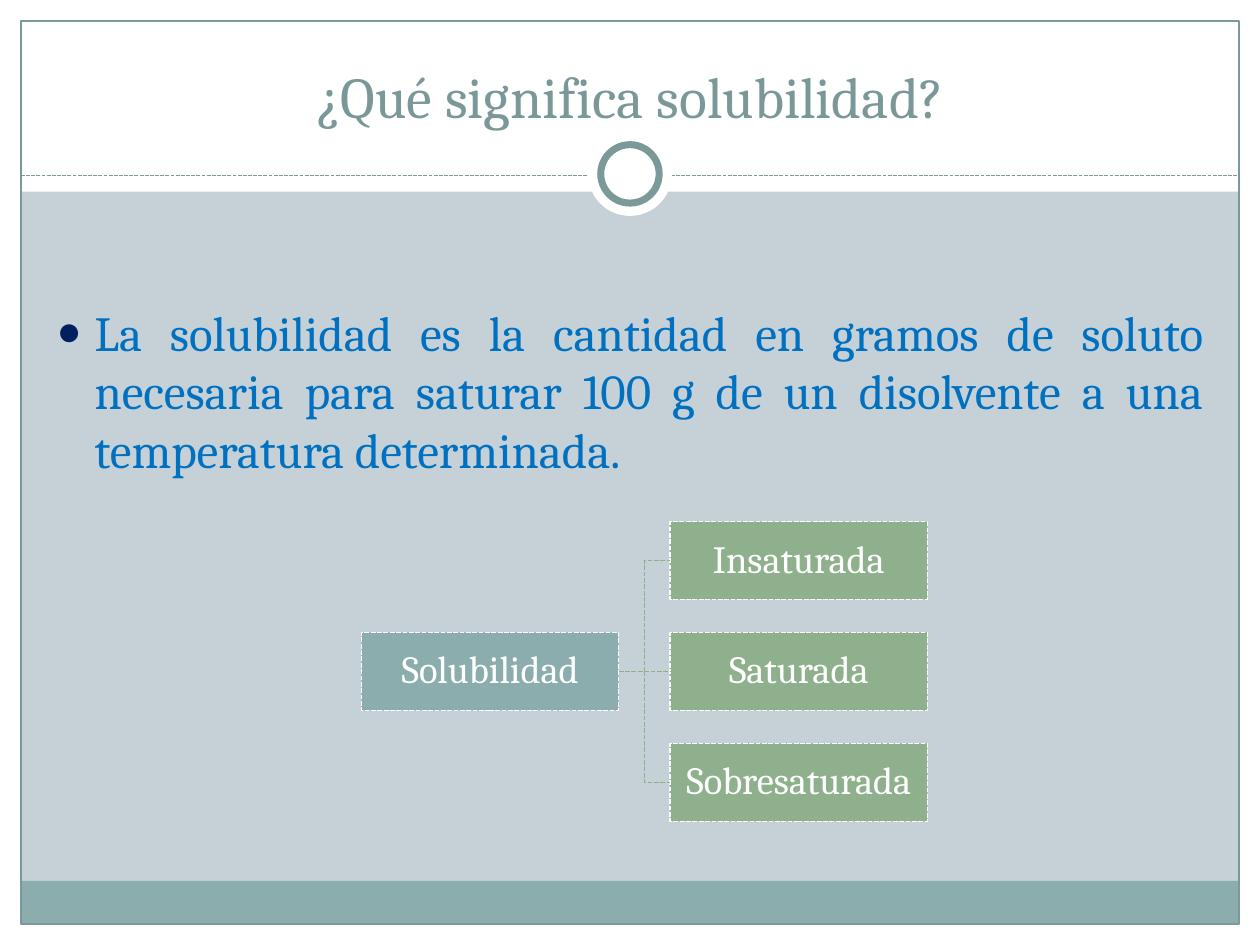
from lxml import etree
from pptx import Presentation
from pptx.dml.color import RGBColor
from pptx.enum.dml import MSO_LINE
from pptx.enum.shapes import MSO_CONNECTOR, MSO_SHAPE
from pptx.enum.text import MSO_ANCHOR, PP_ALIGN
from pptx.oxml.ns import qn
from pptx.util import Pt

RECT, OVAL = MSO_SHAPE.RECTANGLE, MSO_SHAPE.OVAL
STRAIGHT, ELBOW = MSO_CONNECTOR.STRAIGHT, MSO_CONNECTOR.ELBOW
DASH = MSO_LINE.SQUARE_DOT
CENTER, JUSTIFY = PP_ALIGN.CENTER, PP_ALIGN.JUSTIFY
TOP, MIDDLE, BOTTOM = MSO_ANCHOR.TOP, MSO_ANCHOR.MIDDLE, MSO_ANCHOR.BOTTOM
RIGHT, LEFT = 3, 1

WHITE, TEAL, SLATE, GREEN = "FFFFFF", "8CADAE", "7C999A", "8FB08C"
WIDE, HIGH, EDGE = 720, 540, 12


def color(code):
    return RGBColor.from_string(code)


def write(shape, text, size, ink, font="Cambria", align=CENTER,
          anchor=MIDDLE, insets=(7.2, 3.6, 7.2, 3.6), spacing=None):
    frame = shape.text_frame
    frame.word_wrap = True
    frame.vertical_anchor = anchor
    (frame.margin_left, frame.margin_top,
     frame.margin_right, frame.margin_bottom) = map(Pt, insets)
    para = frame.paragraphs[0]
    para.alignment = align
    para.space_before = Pt(0)
    if spacing:
        para.line_spacing = spacing
    run = para.add_run()
    run.text = text
    run.font.size = Pt(size)
    run.font.name = font
    run.font.bold = False
    run.font.color.rgb = color(ink)
    return para


def bullet(para, mark, ink, percent, indent):
    props = para._p.get_or_add_pPr()
    props.set("marL", str(Pt(indent)))
    props.set("indent", str(-Pt(indent)))
    tint = etree.SubElement(props, qn("a:buClr"))
    etree.SubElement(tint, qn("a:srgbClr"), val=ink)
    etree.SubElement(props, qn("a:buSzPct"), val=str(percent * 1000))
    etree.SubElement(props, qn("a:buFont"), typeface="Arial")
    etree.SubElement(props, qn("a:buChar"), char=mark)


class Deck:
    def __init__(self, back):
        self.file = Presentation()
        self.file.slide_width, self.file.slide_height = Pt(WIDE), Pt(HIGH)
        self.slide = self.file.slides.add_slide(self.file.slide_layouts[1])
        self.slide.background.fill.solid()
        self.slide.background.fill.fore_color.rgb = color(back)

    def stroke(self, line, ink, width, dash=None):
        line.color.rgb = color(ink)
        line.width = Pt(width)
        if dash:
            line.dash_style = dash

    def shape(self, kind, box, fill=None, ink=None, width=0.75, dash=None):
        item = self.slide.shapes.add_shape(kind, *map(Pt, box))
        item.shadow.inherit = False
        if fill:
            item.fill.solid()
            item.fill.fore_color.rgb = color(fill)
        else:
            item.fill.background()
        if ink:
            self.stroke(item.line, ink, width, dash)
        else:
            item.line.fill.background()
        return item

    def line(self, kind, ends, ink, width):
        item = self.slide.shapes.add_connector(kind, *map(Pt, ends))
        etree.SubElement(item._element.spPr, qn("a:effectLst"))
        self.stroke(item.line, ink, width, DASH)
        return item

    def join(self, kind, start, end):
        item = self.line(kind, (0, 0, 0, 0), GREEN, 0.9)
        item.begin_connect(start, RIGHT)
        item.end_connect(end, LEFT)

    def holder(self, index, box):
        """Place a layout placeholder in front of what is drawn so far."""
        item = self.slide.placeholders[index]
        item.left, item.top, item.width, item.height = map(Pt, box)
        self.slide.shapes._spTree.append(item._element)
        return item

    def node(self, text, left, top, fill):
        item = self.shape(RECT, (left, top, 147, 44.6), fill, WHITE, 0.9, DASH)
        write(item, text, 22, WHITE, insets=(1.4,) * 4, spacing=0.9)
        return item


def main():
    deck = Deck("C5D1D7")
    inner = WIDE - 2 * EDGE
    for box in ((0, HIGH - EDGE, WIDE, EDGE), (0, 0, WIDE, 109.5),
                (0, 0, EDGE, HIGH), (WIDE - EDGE, 0, EDGE, HIGH)):
        deck.shape(RECT, box, WHITE)
    deck.shape(RECT, (EDGE, 503.3, inner, 24.7), TEAL)
    deck.shape(RECT, (EDGE, EDGE, inner, HIGH - 2 * EDGE), ink=SLATE)
    deck.line(STRAIGHT, (EDGE, 100.5, WIDE - EDGE, 100.5), SLATE, 0.75)
    for size, ink in ((48, None), (33.4, SLATE)):
        box = ((WIDE - size) / 2, 99.4 - size / 2, size, size)
        deck.shape(OVAL, box, WHITE, ink, 4)

    title = deck.holder(0, (24, 18, 672, 60))
    write(title, "¿Qué significa solubilidad?", 33, "7B9899", anchor=BOTTOM)
    body = deck.holder(1, (25.2, 128, 669.6, 360))
    para = write(body, "La solubilidad es la cantidad en gramos de soluto "
                 "necesaria para saturar 100 g de un disolvente a una "
                 "temperatura determinada.", 28, "0070C0", align=JUSTIFY,
                 anchor=TOP, insets=(7.2, 44.6, 7.2, 3.6))
    bullet(para, "●", "002060", 85, 21.6)

    mid, step = 361.4, 63.4
    root = deck.node("Solubilidad", 206.6, mid, TEAL)
    for row, name in enumerate(("Insaturada", "Saturada", "Sobresaturada"), -1):
        leaf = deck.node(name, 383, mid + row * step, GREEN)
        deck.join(ELBOW if row else STRAIGHT, root, leaf)
    deck.file.save("out.pptx")


if __name__ == "__main__":
    main()
